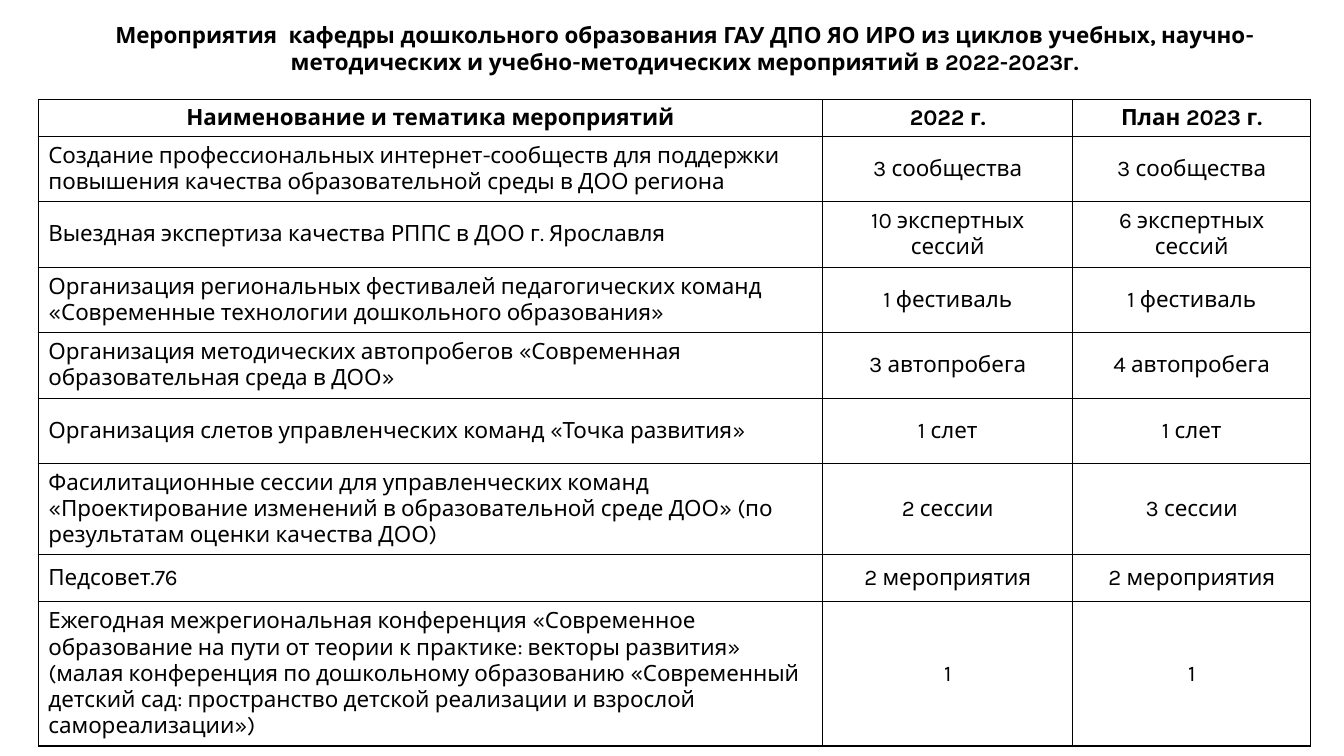
from lxml import etree
from pptx import Presentation
from pptx import util as u
from pptx.dml.color import RGBColor
from pptx.enum import text
from pptx.oxml import ns

FONT = "Karla"
BLACK, WHITE = "000000", "FFFFFF"
TITLE = ("Мероприятия  кафедры дошкольного образования ГАУ ДПО ЯО ИРО из циклов "
         "учебных, научно-методических и учебно-методических мероприятий в 2022-2023г.")
WIDTHS = (7.78, 2.48, 2.36)
# Row height, then the text of the three columns
ROWS = [
    (0.36, "Наименование и тематика мероприятий", "2022 г.", "План 2023 г."),
    (0.65, "Создание профессиональных интернет-сообществ для поддержки повышения "
           "качества образовательной среды в ДОО региона",
     "3 сообщества", "3 сообщества"),
    (0.65, "Выездная экспертиза качества РППС в ДОО г. Ярославля",
     "10 экспертных сессий", "6 экспертных сессий"),
    (0.65, "Организация региональных фестивалей педагогических команд "
           "«Современные технологии дошкольного образования»",
     "1 фестиваль", "1 фестиваль"),
    (0.65, "Организация методических автопробегов «Современная "
           "образовательная среда в ДОО»",
     "3 автопробега", "4 автопробега"),
    (0.65, "Организация слетов управленческих команд «Точка развития»",
     "1 слет", "1 слет"),
    (0.9, "Фасилитационные сессии для управленческих команд\n"
          "«Проектирование изменений в образовательной среде ДОО» "
          "(по результатам оценки качества ДОО)",
     "2 сессии", "3 сессии"),
    (0.47, "Педсовет.76", "2 мероприятия", "2 мероприятия"),
    (1.43, "Ежегодная межрегиональная конференция «Современное образование на пути "
           "от теории к практике: векторы развития» (малая конференция по дошкольному "
           "образованию «Современный детский сад: пространство детской реализации "
           "и взрослой самореализации»)",
     "1", "1"),
]


def color(code):
    return RGBColor.from_string(code)


def write(frame, words, bold, align):
    frame.text = words
    for para in frame.paragraphs:
        para.alignment = align
        para.font.name = FONT
        para.font.size = u.Pt(16)
        para.font.bold = bold
        para.font.color.rgb = color(BLACK)


def border(cell):
    props = cell._tc.get_or_add_tcPr()
    for i, side in enumerate(("a:lnL", "a:lnR", "a:lnT", "a:lnB")):
        line = etree.Element(ns.qn(side), w=str(u.Pt(1)))
        fill = etree.SubElement(line, ns.qn("a:solidFill"))
        etree.SubElement(fill, ns.qn("a:srgbClr"), val=BLACK)
        props.insert(i, line)


def add_title(slide):
    title = slide.shapes.title
    title.left, title.top = u.Inches(0.63), u.Inches(0.08)
    title.width, title.height = u.Inches(12.33), u.Inches(0.67)
    frame = title.text_frame
    frame.word_wrap = True
    frame.auto_size = text.MSO_AUTO_SIZE.NONE
    frame.vertical_anchor = text.MSO_ANCHOR.TOP
    frame.margin_left = frame.margin_right = frame.margin_bottom = 0
    frame.margin_top = u.Inches(0.13)
    write(frame, TITLE, True, text.PP_ALIGN.CENTER)


def add_plan(slide):
    high = sum(row[0] for row in ROWS)
    table = slide.shapes.add_table(
        len(ROWS), len(WIDTHS), u.Inches(0.38), u.Inches(0.99),
        u.Inches(sum(WIDTHS)), u.Inches(high)).table
    table.first_row = table.horz_banding = False
    for col, width in zip(table.columns, WIDTHS):
        col.width = u.Inches(width)
    for r, (height, *words) in enumerate(ROWS):
        table.rows[r].height = u.Inches(height)
        for c, word in enumerate(words):
            cell = table.cell(r, c)
            cell.vertical_anchor = text.MSO_ANCHOR.MIDDLE
            cell.fill.solid()
            cell.fill.fore_color.rgb = color(WHITE)
            border(cell)
            head = r == 0
            align = text.PP_ALIGN.CENTER if head or c else text.PP_ALIGN.LEFT
            write(cell.text_frame, word, head, align)


def main():
    deck = Presentation()
    deck.slide_width, deck.slide_height = u.Inches(13.33), u.Inches(7.5)
    slide = deck.slides.add_slide(deck.slide_layouts[5])
    add_title(slide)
    add_plan(slide)
    deck.save("out.pptx")


if __name__ == "__main__":
    main()
